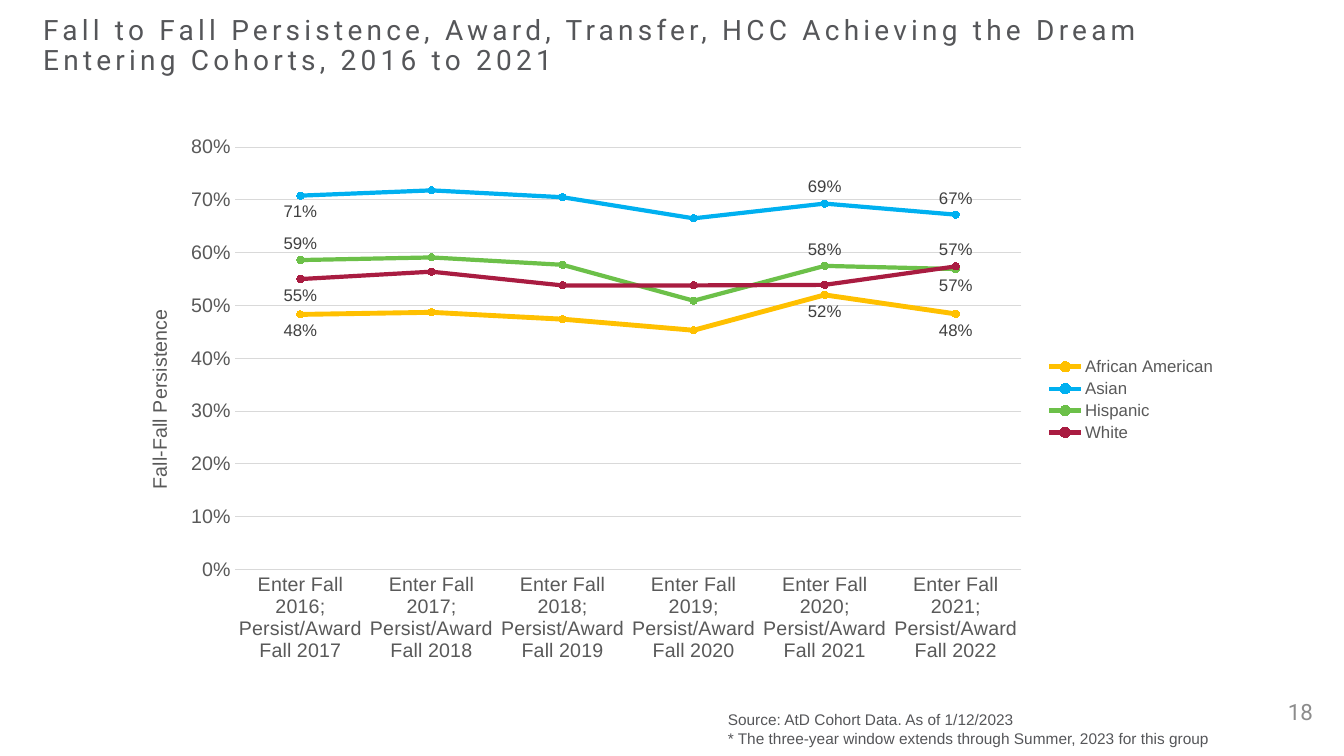
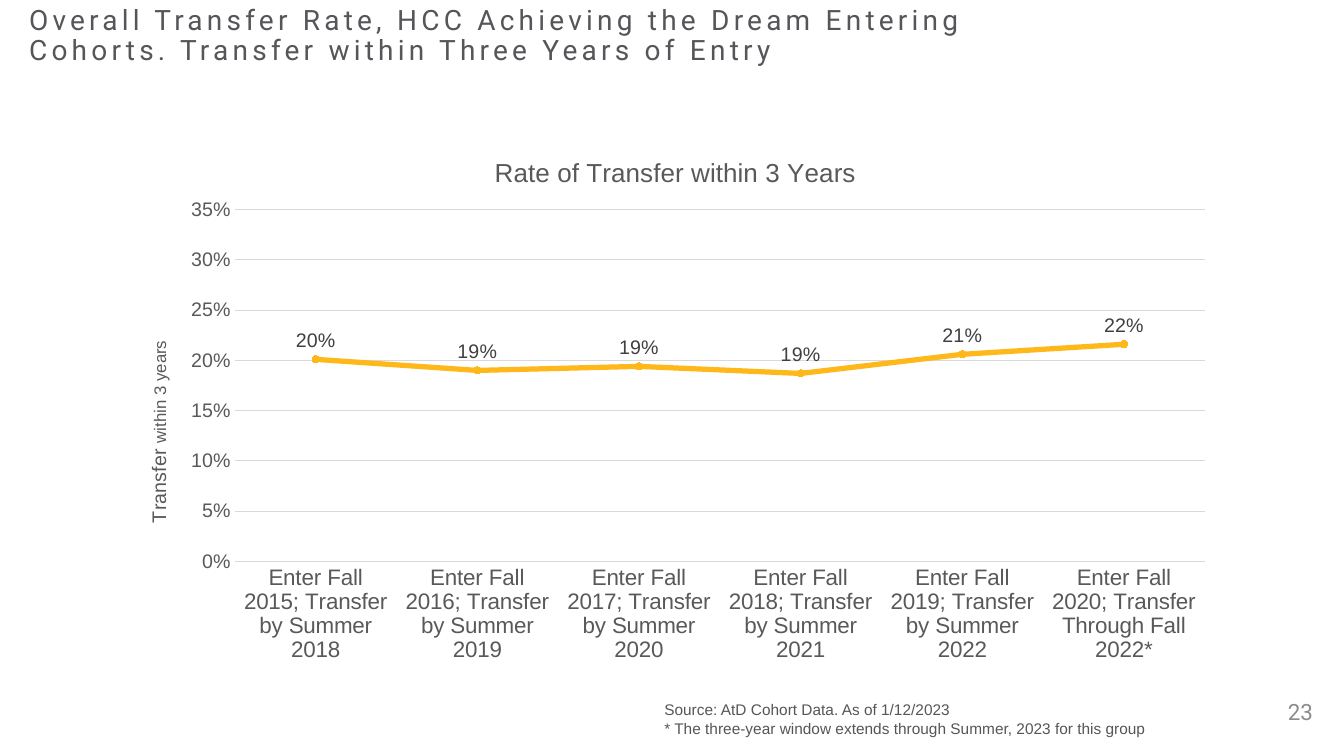
"""Two slides of cohort line charts on persistence and transfer."""
from typing import NamedTuple

from lxml.etree import SubElement as Sub
from pptx import Presentation
from pptx.chart.data import CategoryChartData as Data
from pptx.dml.color import RGBColor as RGB
from pptx.enum.chart import XL_CHART_TYPE as Kind
from pptx.enum.chart import XL_LABEL_POSITION as Spot
from pptx.enum.chart import XL_LEGEND_POSITION as Side
from pptx.enum.chart import XL_MARKER_STYLE as Mark
from pptx.enum.chart import XL_TICK_MARK as Tick
from pptx.enum.text import MSO_ANCHOR as Anchor
from pptx.enum.text import PP_ALIGN as Align
from pptx.oxml.ns import qn
from pptx.util import Inches, Pt

INK = RGB(0x55, 0x56, 0x59)
GRAY = RGB(0x59, 0x59, 0x59)
DARK = RGB(0x40, 0x40, 0x40)
PALE = RGB(0x8C, 0x8C, 0x8C)
RULE = RGB(0xD9, 0xD9, 0xD9)
GOLD = RGB(0xFF, 0xC0, 0x00)
BLUE = RGB(0x00, 0xB0, 0xF0)
GREEN = RGB(0x6C, 0xC0, 0x49)
WINE = RGB(0xA9, 0x1C, 0x41)
AMBER = RGB(0xFF, 0xB8, 0x19)

HEAD = "Roboto"
BODY = "Arial"
NOTE = (
    "Source: AtD Cohort Data. As of 1/12/2023\n"
    "* The three-year window extends through Summer, 2023 for this group"
)
UP, DOWN = Spot.ABOVE, Spot.BELOW


class Box(NamedTuple):
    """Left, top, width and height in inches."""

    x: float
    y: float
    w: float
    h: float


class Line(NamedTuple):
    """One series with its label spots by point."""

    name: str
    vals: list[float]
    color: RGB
    width: float
    tags: dict[int, Spot]


class Page(NamedTuple):
    """All that differs between the slides."""

    title: str
    head: Box
    note: Box
    num: str
    frame: Box
    plot: Box
    cats: list[str]
    lines: list[Line]
    top: float
    step: float
    cat_size: int
    tag_size: int
    axis: list[tuple[str, int]]
    axis_y: float
    name: str = ""


PAGES = [
    Page(
        title="Fall to Fall Persistence, Award, Transfer, HCC Achieving the "
        "Dream Entering Cohorts, 2016 to 2021",
        head=Box(0.33, 0.27, 11.69, 0.38),
        note=Box(7.12, 7, 5.69, 0.47),
        num="18",
        frame=Box(1.17, 1.25, 11, 5.43),
        plot=Box(2.33, 1.46, 7.8, 4.19),
        cats=[f"Enter Fall {y}; Persist/Award Fall {y + 1}" for y in range(2016, 2022)],
        lines=[
            Line("African American", [0.483, 0.487, 0.474, 0.453, 0.52, 0.484],
                 GOLD, 3.5, {0: DOWN, 4: DOWN, 5: DOWN}),
            Line("Asian", [0.708, 0.718, 0.705, 0.665, 0.693, 0.672],
                 BLUE, 3, {0: DOWN, 4: UP, 5: UP}),
            Line("Hispanic", [0.586, 0.591, 0.577, 0.509, 0.575, 0.569],
                 GREEN, 3, {0: UP, 4: UP, 5: DOWN}),
            Line("White", [0.55, 0.564, 0.538, 0.538, 0.539, 0.574],
                 WINE, 3, {0: DOWN, 5: UP}),
        ],
        top=0.8,
        step=0.1,
        cat_size=14,
        tag_size=12,
        axis=[("Fall-Fall Persistence", 14)],
        axis_y=3.03,
    ),
    Page(
        title="Overall Transfer Rate, HCC Achieving the Dream Entering Cohorts. "
        "Transfer within Three Years of Entry",
        head=Box(0.19, 0.17, 10.13, 0.38),
        note=Box(6.49, 6.9, 5.69, 0.47),
        num="23",
        frame=Box(1.18, 1.25, 11, 5.43),
        plot=Box(2.33, 2.08, 9.62, 3.49),
        cats=[f"Enter Fall {y}; Transfer by Summer {y + 3}" for y in range(2015, 2020)]
        + ["Enter Fall 2020; Transfer Through Fall 2022*"],
        lines=[
            Line("Series 1", [0.201, 0.19, 0.194, 0.187, 0.206, 0.216],
                 AMBER, 3.75, dict.fromkeys(range(6), UP)),
        ],
        top=0.35,
        step=0.05,
        cat_size=16,
        tag_size=14,
        axis=[("Transfer ", 14), ("within 3 years", 12)],
        axis_y=3.35,
        name="Rate of Transfer within 3 Years",
    ),
]


def style(font, size: float, color: RGB, face: str = BODY) -> None:
    """Set the look of a font."""
    font.size, font.name, font.bold = Pt(size), face, False
    font.color.rgb = color


def write(slide, box: Box, text: str, size: float, color: RGB, face: str,
          anchor: Anchor = Anchor.TOP, align: Align = Align.LEFT):
    """Add a wrapped text box and return its frame."""
    frame = slide.shapes.add_textbox(*map(Inches, box)).text_frame
    frame.word_wrap = True
    frame.vertical_anchor = anchor
    frame.text = text
    for para in frame.paragraphs:
        para.alignment = align
        for run in para.runs:
            style(run.font, size, color, face)
    return frame


def place(node, slot: int, frame: Box, x: float, y: float,
          size: tuple[float, float] | None = None) -> None:
    """Fix a chart part at slide inches within the chart frame."""
    old = node.find(qn("c:layout"))
    if old is not None:
        node.remove(old)
    lay = node.makeelement(qn("c:layout"), {})
    node.insert(slot, lay)
    man = Sub(lay, qn("c:manualLayout"))
    vals = {"xMode": "edge", "yMode": "edge",
            "x": (x - frame.x) / frame.w, "y": (y - frame.y) / frame.h}
    if size:
        vals = {"layoutTarget": "inner", **vals,
                "w": size[0] / frame.w, "h": size[1] / frame.h}
    for key, val in vals.items():
        Sub(man, qn(f"c:{key}")).set("val", str(val))


def set_axes(chart, page: Page) -> None:
    """Format both axes and the value title."""
    cat, val = chart.category_axis, chart.value_axis
    for axis, size in ((cat, page.cat_size), (val, 14)):
        axis.major_tick_mark = axis.minor_tick_mark = Tick.NONE
        style(axis.tick_labels.font, size, GRAY)
    turn = cat._element.find(qn("c:txPr")).find(qn("a:bodyPr"))
    turn.set("rot", "-60000000")
    turn.set("vert", "horz")
    val.minimum_scale, val.maximum_scale = 0, page.top
    val.major_unit = page.step
    val.tick_labels.number_format = "0%"
    val.tick_labels.number_format_is_linked = False
    val.format.line.fill.background()
    val.has_major_gridlines = True
    for line in (cat.format.line, val.major_gridlines.format.line):
        line.color.rgb, line.width = RULE, Pt(0.75)
    frame = val.axis_title.text_frame
    for text, size in page.axis:
        run = frame.paragraphs[0].add_run()
        run.text = text
        style(run.font, size, GRAY)
    frame._txBody.find(qn("a:bodyPr")).set("rot", "-5400000")
    place(val.axis_title._element, 1, page.frame, 1.42, page.axis_y)


def set_line(series, line: Line, size: int) -> None:
    """Format one series, its markers and its labels."""
    series.smooth = False
    series.format.line.color.rgb = line.color
    series.format.line.width = Pt(line.width)
    mark = series.marker
    mark.style, mark.size = Mark.CIRCLE, 5
    mark.format.fill.solid()
    mark.format.fill.fore_color.rgb = line.color
    mark.format.line.color.rgb = line.color
    series.data_labels.show_value = False
    for spot, pos in line.tags.items():
        tag = series.points[spot].data_label
        style(tag.font, size, DARK)
        tag.position = pos


def draw_chart(slide, page: Page) -> None:
    """Add the line chart of a page."""
    data = Data(number_format="0%")
    data.categories = page.cats
    for line in page.lines:
        data.add_series(line.name, line.vals)
    chart = slide.shapes.add_chart(
        Kind.LINE_MARKERS, *map(Inches, page.frame), data).chart
    style(chart.font, 10, GRAY)
    chart.plots[0].vary_by_categories = False
    chart.has_title = bool(page.name)
    if page.name:
        frame = chart.chart_title.text_frame
        frame.text = page.name
        style(frame.paragraphs[0].runs[0].font, 18.6, GRAY)
        place(chart.chart_title._element, 1, page.frame, 4.86, 1.49)
    chart.has_legend = len(page.lines) > 1
    if chart.has_legend:
        chart.legend.position = Side.RIGHT
        chart.legend.include_in_layout = False
        style(chart.legend.font, 12, GRAY)
    set_axes(chart, page)
    for series, line in zip(chart.plots[0].series, page.lines):
        set_line(series, line, page.tag_size)
    area = chart._chartSpace.find(qn("c:chart")).find(qn("c:plotArea"))
    plot = page.plot
    place(area, 0, page.frame, plot.x, plot.y, (plot.w, plot.h))


def draw_page(deck, page: Page) -> None:
    """Add one slide."""
    slide = deck.slides.add_slide(deck.slide_layouts[6])
    write(slide, Box(12.5, 6.79, 0.62, 0.45), page.num, 16, PALE, HEAD,
          Anchor.BOTTOM, Align.RIGHT)
    draw_chart(slide, page)
    para = write(slide, page.head, page.title, 20, INK, HEAD,
                 Anchor.MIDDLE).paragraphs[0]
    para.line_spacing = 0.9
    para.runs[0].font._element.set("spc", "300")
    write(slide, page.note, NOTE, 11, INK, BODY)


def main() -> None:
    """Build and save the deck."""
    deck = Presentation()
    deck.slide_width, deck.slide_height = Inches(13.33), Inches(7.5)
    for page in PAGES:
        draw_page(deck, page)
    deck.save("out.pptx")


if __name__ == "__main__":
    main()
